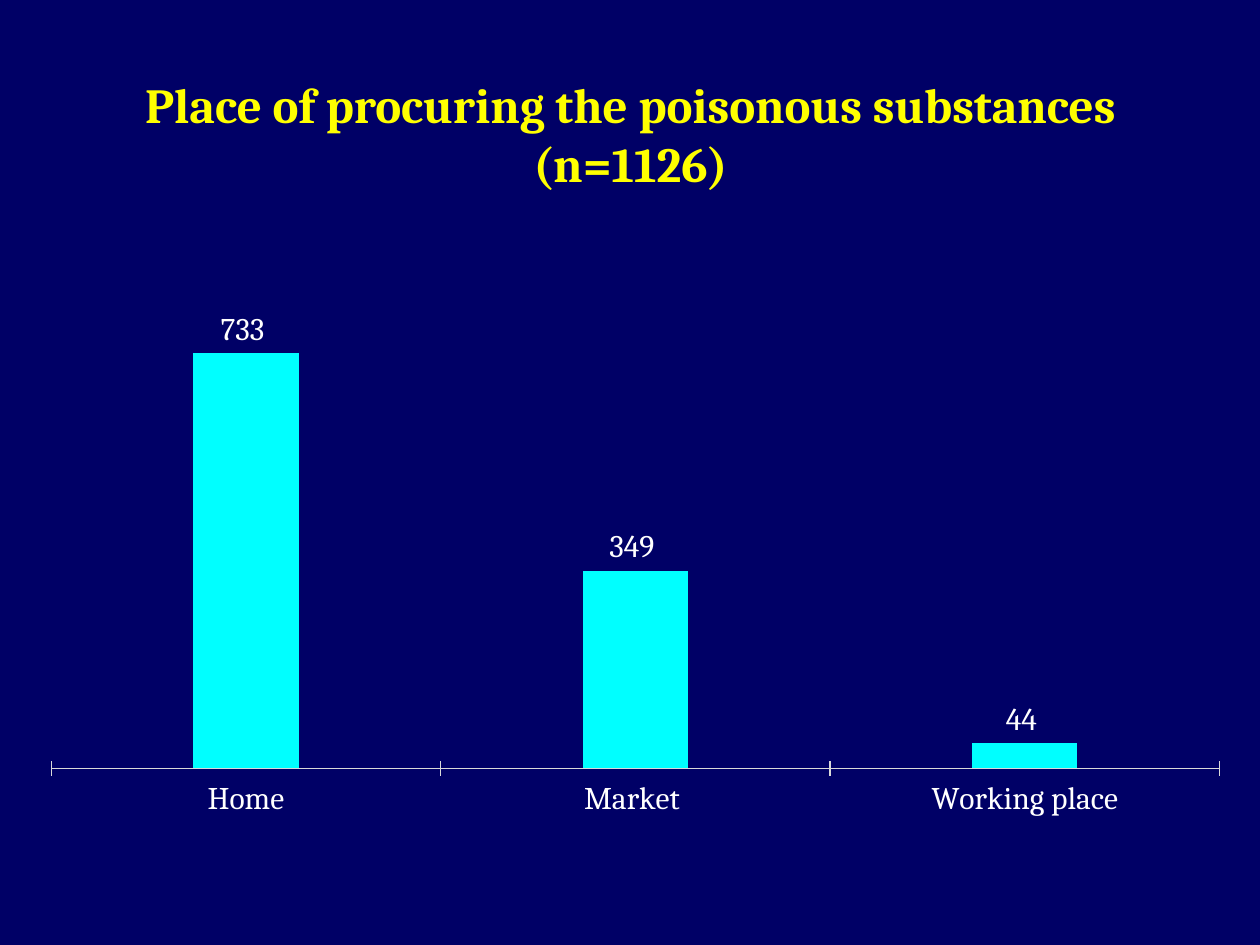
from dataclasses import dataclass

from lxml.etree import SubElement
from pptx import Presentation
from pptx.chart.data import CategoryChartData
from pptx.dml.color import RGBColor
from pptx.enum.chart import XL_CHART_TYPE, XL_LABEL_POSITION, XL_TICK_LABEL_POSITION, XL_TICK_MARK
from pptx.enum.text import MSO_ANCHOR, MSO_AUTO_SIZE, PP_ALIGN
from pptx.oxml.ns import qn
from pptx.util import Emu, Pt


@dataclass(frozen=True)
class Theme:
    background: RGBColor = RGBColor(0x00, 0x00, 0x66)
    title: RGBColor = RGBColor(0xFF, 0xFF, 0x00)
    text: RGBColor = RGBColor(0xFF, 0xFF, 0xFF)
    bar: RGBColor = RGBColor(0x00, 0xFF, 0xFF)
    axis: RGBColor = RGBColor(0xD9, 0xD9, 0xD9)
    font: str = "Cambria"
    title_size: Pt = Pt(28)
    chart_size: Pt = Pt(18)


THEME = Theme()
PLACES = [("Home", 0.651, "733 "), ("Market ", 0.31, "349 "), ("Working place", 0.039, "44 ")]
PLOT_AREA = {"x": 0.016, "y": 0.228, "w": 0.968, "h": 0.659}


def px(length):
    return Emu(round(length * 914400 / 126))


def style_font(font, size, color, bold=False):
    font.name = THEME.font
    font.size = size
    font.bold = bold
    font.color.rgb = color


def set_title(slide, text, left, top, width, height):
    title = slide.shapes.title
    title.left, title.top, title.width, title.height = map(px, (left, top, width, height))
    frame = title.text_frame
    frame.word_wrap = True
    frame.auto_size = MSO_AUTO_SIZE.SHAPE_TO_FIT_TEXT
    frame.vertical_anchor = MSO_ANCHOR.TOP
    paragraph = frame.paragraphs[0]
    paragraph.alignment = PP_ALIGN.CENTER
    run = paragraph.add_run()
    run.text = text
    style_font(run.font, THEME.title_size, THEME.title, bold=True)


def place_plot_area(chart):
    plot_area = chart.plots[0]._element.getparent()
    for old_layout in plot_area.findall(qn("c:layout")):
        plot_area.remove(old_layout)
    layout = SubElement(plot_area, qn("c:layout"))
    plot_area.insert(0, layout)
    manual = SubElement(layout, qn("c:manualLayout"))
    settings = {"layoutTarget": "inner", "xMode": "edge", "yMode": "edge", **PLOT_AREA}
    for name, value in settings.items():
        SubElement(manual, qn(f"c:{name}")).set("val", str(value))


def format_axes(chart):
    category_axis = chart.category_axis
    category_axis.major_tick_mark = XL_TICK_MARK.CROSS
    category_axis.minor_tick_mark = XL_TICK_MARK.NONE
    category_axis.tick_label_position = XL_TICK_LABEL_POSITION.LOW
    category_axis.format.line.color.rgb = THEME.axis
    category_axis.format.line.width = Pt(0.75)
    value_axis = chart.value_axis
    value_axis.minimum_scale = 0
    value_axis.maximum_scale = 0.7
    value_axis.has_major_gridlines = False
    value_axis.tick_labels.number_format = "0.00%"
    value_axis.tick_labels.number_format_is_linked = False
    value_axis.visible = False


def label_bars(series):
    labels = series.data_labels
    labels.show_value = True
    labels.number_format = "0.00%"
    labels.number_format_is_linked = False
    labels.position = XL_LABEL_POSITION.OUTSIDE_END
    style_font(labels.font, THEME.chart_size, THEME.text)
    for index, (_, _, count) in enumerate(PLACES):
        label = series.points[index].data_label
        run = label.text_frame.paragraphs[0].add_run()
        run.text = count
        style_font(run.font, THEME.chart_size, THEME.text)
        label.position = XL_LABEL_POSITION.OUTSIDE_END


def add_column_chart(slide, left, top, width, height):
    data = CategoryChartData(number_format="0.00%")
    data.categories = [place for place, _, _ in PLACES]
    data.add_series("Series 1", [share for _, share, _ in PLACES])
    chart = slide.shapes.add_chart(
        XL_CHART_TYPE.COLUMN_CLUSTERED, *map(px, (left, top, width, height)), data
    ).chart
    chart.has_title = False
    chart.has_legend = False
    style_font(chart.font, THEME.chart_size, THEME.text)
    plot = chart.plots[0]
    plot.gap_width = 270
    plot.vary_by_categories = False
    series = plot.series[0]
    series.format.fill.solid()
    series.format.fill.fore_color.rgb = THEME.bar
    label_bars(series)
    format_axes(chart)
    place_plot_area(chart)


def main():
    presentation = Presentation()
    presentation.slide_width = px(1260)
    presentation.slide_height = px(945)
    slide = presentation.slides.add_slide(presentation.slide_layouts[5])
    slide.background.fill.solid()
    slide.background.fill.fore_color.rgb = THEME.background
    add_column_chart(slide, 32, 168, 1207, 677)
    set_title(slide, "Place of procuring the poisonous substances (n=1126)", 53, 68, 1155, 131)
    presentation.save("out.pptx")


if __name__ == "__main__":
    main()
